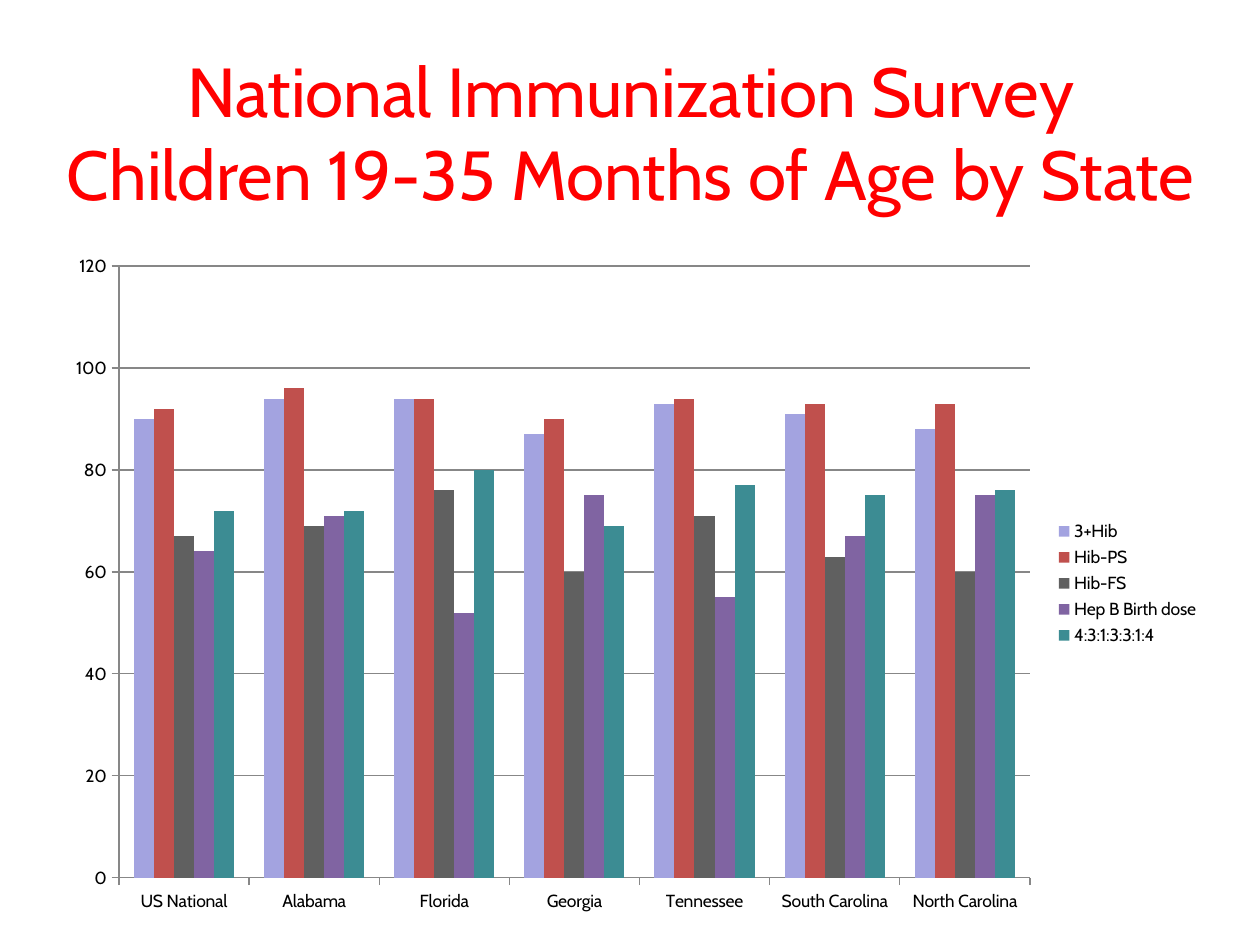
import pptx
import pptx.chart.data
import pptx.dml.color
import pptx.enum.chart
import pptx.enum.text
import pptx.util

Inches = pptx.util.Inches
Pt = pptx.util.Pt

FONT = "Cabin"
COLORS = {
    "title": "FF0000",
    "text": "000000",
    "line": "878787",
    "3+Hib": "A3A3E0",
    "Hib-PS": "C0504D",
    "Hib-FS": "606060",
    "Hep B Birth dose": "8064A2",
    "4:3:1:3:3:1:4": "3C8C93",
}
STATES = ["US National", "Alabama", "Florida", "Georgia", "Tennessee",
          "South Carolina", "North Carolina"]
COVERAGE = {
    "3+Hib": [90, 94, 94, 87, 93, 91, 88],
    "Hib-PS": [92, 96, 94, 90, 94, 93, 93],
    "Hib-FS": [67, 69, 76, 60, 71, 63, 60],
    "Hep B Birth dose": [64, 71, 52, 75, 55, 67, 75],
    "4:3:1:3:3:1:4": [72, 72, 80, 69, 77, 75, 76],
}


def color(name):
    return pptx.dml.color.RGBColor.from_string(COLORS[name])


def style_font(font, size, name):
    font.name = FONT
    font.size = Pt(size)
    font.color.rgb = color(name)


def style_line(line):
    line.color.rgb = color("line")
    line.width = Pt(0.75)


def add_title(page, left, top, width, height):
    box = page.shapes.add_textbox(left, top, width, height)
    frame = box.text_frame
    frame.word_wrap = True
    frame.vertical_anchor = pptx.enum.text.MSO_ANCHOR.MIDDLE
    para = frame.paragraphs[0]
    para.alignment = pptx.enum.text.PP_ALIGN.CENTER
    lines = ["National Immunization Survey", "Children 19-35 Months of Age by State"]
    for index, words in enumerate(lines):
        if index:
            para.add_line_break()
        span = para.add_run()
        span.text = words
        style_font(span.font, 39.6, "title")


def add_coverage_chart(page, left, top, width, height):
    data = pptx.chart.data.CategoryChartData()
    data.categories = STATES
    for name, values in COVERAGE.items():
        data.add_series(name, values)
    kind = pptx.enum.chart.XL_CHART_TYPE.COLUMN_CLUSTERED
    chart = page.shapes.add_chart(kind, left, top, width, height, data).chart
    chart.has_title = False
    style_font(chart.font, 10, "text")

    plot = chart.plots[0]
    plot.gap_width = 150
    plot.overlap = 0
    plot.vary_by_categories = False
    for series in plot.series:
        series.format.fill.solid()
        series.format.fill.fore_color.rgb = color(series.name)

    for axis in (chart.category_axis, chart.value_axis):
        axis.major_tick_mark = pptx.enum.chart.XL_TICK_MARK.OUTSIDE
        style_line(axis.format.line)
    scale = chart.value_axis
    scale.minimum_scale = 0
    scale.maximum_scale = 120
    scale.major_unit = 20
    scale.has_major_gridlines = True
    style_line(scale.major_gridlines.format.line)

    chart.has_legend = True
    chart.legend.position = pptx.enum.chart.XL_LEGEND_POSITION.RIGHT
    chart.legend.include_in_layout = False


def main():
    deck = pptx.Presentation()
    deck.slide_width = Inches(10)
    deck.slide_height = Inches(7.5)
    page = deck.slides.add_slide(deck.slide_layouts[6])
    add_title(page, Inches(0.17), Inches(0.5), Inches(9.67), Inches(1.08))
    add_coverage_chart(page, Inches(0.42), Inches(1.92), Inches(9.2), Inches(5.42))
    deck.save("out.pptx")


if __name__ == "__main__":
    main()
